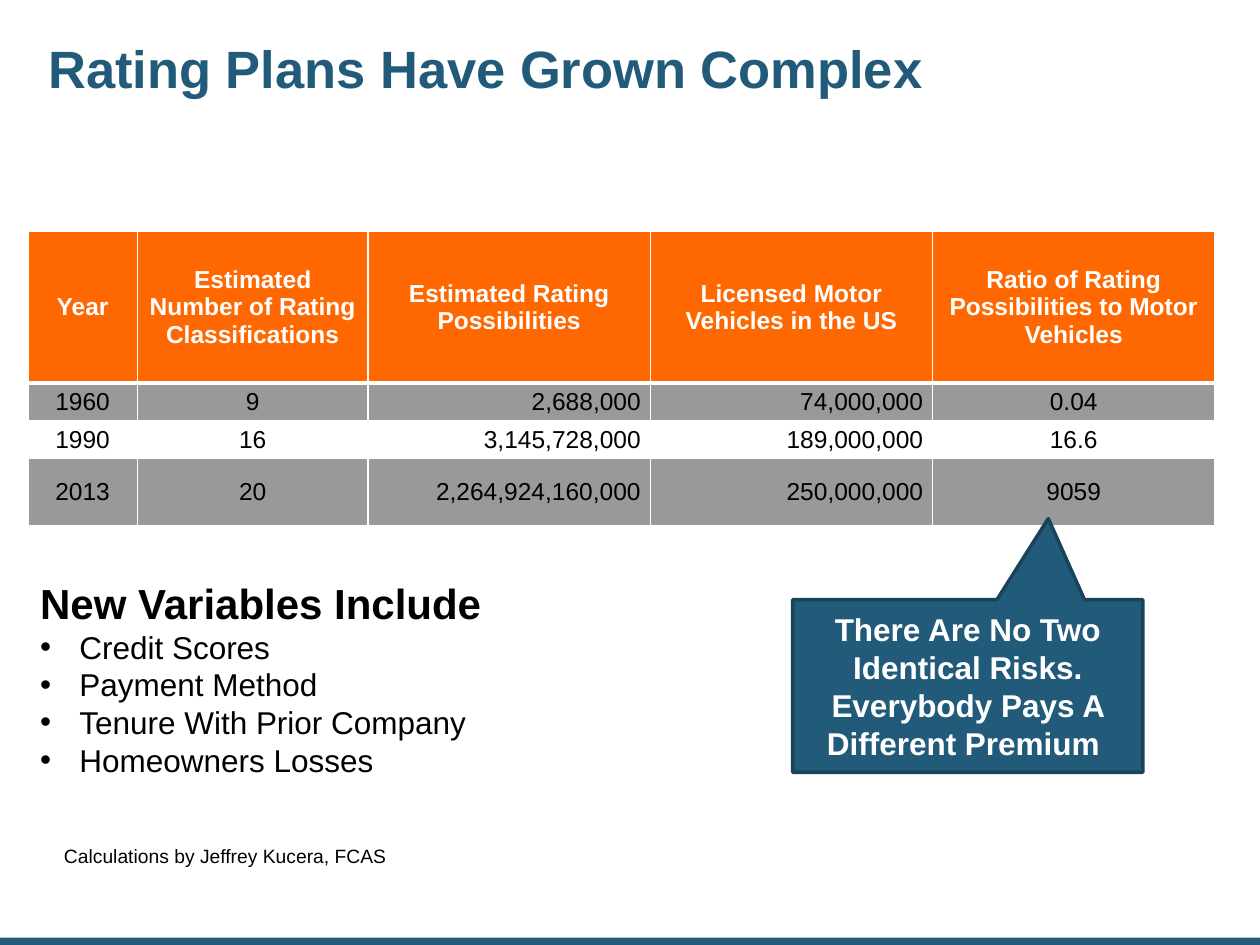
from lxml.etree import SubElement
from pptx import Presentation
from pptx.dml.color import RGBColor
from pptx.enum.shapes import MSO_SHAPE
from pptx.enum.text import MSO_ANCHOR, MSO_AUTO_SIZE, PP_ALIGN
from pptx.oxml.ns import qn
from pptx.util import Cm, Pt

BLUE = RGBColor(0x22, 0x5A, 0x7A)
DARK_BLUE = RGBColor(0x19, 0x43, 0x5A)
ORANGE = RGBColor(0xFF, 0x68, 0x01)
GRAY = RGBColor(0x99, 0x99, 0x99)
WHITE = RGBColor(0xFF, 0xFF, 0xFF)
BLACK = RGBColor(0, 0, 0)

SLIDE_WIDTH, SLIDE_HEIGHT = Cm(25.4), Cm(19.05)
COLUMN_WIDTHS = (2.21, 4.65, 5.69, 5.69, 5.69)
ROW_HEIGHTS = (3.05, 0.76, 0.76, 1.35)
NUMBER_COLUMNS = (2, 3)
RATING_ROWS = (
    ("Year", "Estimated Number of Rating Classifications",
     "Estimated Rating Possibilities", "Licensed Motor Vehicles in the US",
     "Ratio of Rating Possibilities to Motor Vehicles"),
    ("1960", "9", "2,688,000", "74,000,000", "0.04"),
    ("1990", "16", "3,145,728,000", "189,000,000", "16.6"),
    ("2013", "20", "2,264,924,160,000", "250,000,000", "9059"),
)
VARIABLES = ("Credit Scores", "Payment Method", "Tenure With Prior Company",
             "Homeowners Losses")


def set_font(paragraph, size, color, bold=False):
    font = paragraph.font
    font.name = "Arial"
    font.size = Pt(size)
    font.bold = bold
    font.color.rgb = color


def set_borders(cell, bottom_width):
    """Draw white cell borders; call before the cell gets its fill."""
    properties = cell._tc.get_or_add_tcPr()
    for side, width in (("L", 1), ("R", 1), ("T", 1), ("B", bottom_width)):
        line = SubElement(properties, qn(f"a:ln{side}"), w=str(Pt(width)))
        fill = SubElement(line, qn("a:solidFill"))
        SubElement(fill, qn("a:srgbClr"), val=str(WHITE))


def add_bullet(paragraph):
    properties = paragraph._p.get_or_add_pPr()
    indent = Cm(0.79)
    properties.set("marL", str(indent))
    properties.set("indent", str(-indent))
    SubElement(properties, qn("a:buFont"), typeface="Arial")
    SubElement(properties, qn("a:buChar"), char="•")


def add_plain_shape(slide, kind, left, top, width, height):
    shape = slide.shapes.add_shape(kind, left, top, width, height)
    shape.shadow.inherit = False
    shape.fill.solid()
    shape.fill.fore_color.rgb = BLUE
    return shape


def add_text_frame(slide, left, top, width, height):
    text_frame = slide.shapes.add_textbox(left, top, width, height).text_frame
    text_frame.word_wrap = True
    text_frame.auto_size = MSO_AUTO_SIZE.SHAPE_TO_FIT_TEXT
    return text_frame


def add_footer_bar(slide, left, top, width, height):
    bar = add_plain_shape(slide, MSO_SHAPE.RECTANGLE, left, top, width, height)
    bar.line.fill.background()


def set_title(slide, left, top, width, height):
    title = slide.shapes.title
    title.left, title.top, title.width, title.height = left, top, width, height
    text_frame = title.text_frame
    text_frame.text = "Rating Plans Have Grown Complex"
    text_frame.word_wrap = True
    text_frame.vertical_anchor = MSO_ANCHOR.MIDDLE
    text_frame.margin_left = text_frame.margin_right = Cm(0.13)
    text_frame.margin_top = text_frame.margin_bottom = Cm(0.13)
    paragraph = text_frame.paragraphs[0]
    paragraph.alignment = PP_ALIGN.LEFT
    paragraph.line_spacing = 0.9
    set_font(paragraph, 30, BLUE, bold=True)


def fill_cell(cell, text, row, column):
    is_header = row == 0
    set_borders(cell, 3 if is_header else 1)
    if row == 2:
        cell.fill.background()
    else:
        cell.fill.solid()
        cell.fill.fore_color.rgb = ORANGE if is_header else GRAY
    cell.text = text
    cell.vertical_anchor = MSO_ANCHOR.MIDDLE
    cell.margin_left = cell.margin_right = Cm(0.19)
    cell.margin_top = cell.margin_bottom = Cm(0.09)
    paragraph = cell.text_frame.paragraphs[0]
    align_right = column in NUMBER_COLUMNS and not is_header
    paragraph.alignment = PP_ALIGN.RIGHT if align_right else PP_ALIGN.CENTER
    set_font(paragraph, 14, WHITE if is_header else BLACK, bold=is_header)


def add_rating_table(slide, left, top):
    table = slide.shapes.add_table(
        len(ROW_HEIGHTS), len(COLUMN_WIDTHS), left, top,
        Cm(sum(COLUMN_WIDTHS)), Cm(sum(ROW_HEIGHTS))).table
    table.horz_banding = False
    for column, width in zip(table.columns, COLUMN_WIDTHS):
        column.width = Cm(width)
    for row, height in zip(table.rows, ROW_HEIGHTS):
        row.height = Cm(height)
    for row, texts in enumerate(RATING_ROWS):
        for column, text in enumerate(texts):
            fill_cell(table.cell(row, column), text, row, column)


def add_variables(slide, left, top, width, height):
    text_frame = add_text_frame(slide, left, top, width, height)
    heading = text_frame.paragraphs[0]
    heading.text = "New Variables Include"
    set_font(heading, 24, BLACK, bold=True)
    for variable in VARIABLES:
        paragraph = text_frame.add_paragraph()
        paragraph.text = variable
        add_bullet(paragraph)
        set_font(paragraph, 18, BLACK)


def add_credit(slide, left, top, width, height):
    paragraph = add_text_frame(slide, left, top, width, height).paragraphs[0]
    paragraph.text = "Calculations by Jeffrey Kucera, FCAS"
    set_font(paragraph, 11, BLACK)


def add_callout(slide, left, top, width, height):
    callout = add_plain_shape(slide, MSO_SHAPE.RECTANGULAR_CALLOUT,
                              left, top, width, height)
    callout.adjustments[0] = 0.23
    callout.adjustments[1] = -0.97
    callout.line.color.rgb = DARK_BLUE
    callout.line.width = Pt(2)
    text_frame = callout.text_frame
    text_frame.word_wrap = True
    text_frame.vertical_anchor = MSO_ANCHOR.MIDDLE
    paragraph = text_frame.paragraphs[0]
    paragraph.text = ("There Are No Two Identical Risks. "
                      "Everybody Pays A Different Premium ")
    paragraph.alignment = PP_ALIGN.CENTER
    set_font(paragraph, 18, WHITE, bold=True)


def main():
    presentation = Presentation()
    presentation.slide_width = SLIDE_WIDTH
    presentation.slide_height = SLIDE_HEIGHT
    slide = presentation.slides.add_slide(presentation.slide_layouts[5])
    bar_height = Cm(0.15)
    add_footer_bar(slide, 0, SLIDE_HEIGHT - bar_height, SLIDE_WIDTH, bar_height)
    add_rating_table(slide, Cm(0.56), Cm(4.67))
    set_title(slide, Cm(0.84), Cm(0.25), Cm(20.55), Cm(2.39))
    add_credit(slide, Cm(1.04), Cm(16.89), Cm(20.68), Cm(0.74))
    add_variables(slide, Cm(0.56), Cm(11.51), Cm(11.48), Cm(4.37))
    add_callout(slide, Cm(15.98), Cm(12.09), Cm(7.06), Cm(3.48))
    presentation.save("out.pptx")


if __name__ == "__main__":
    main()
